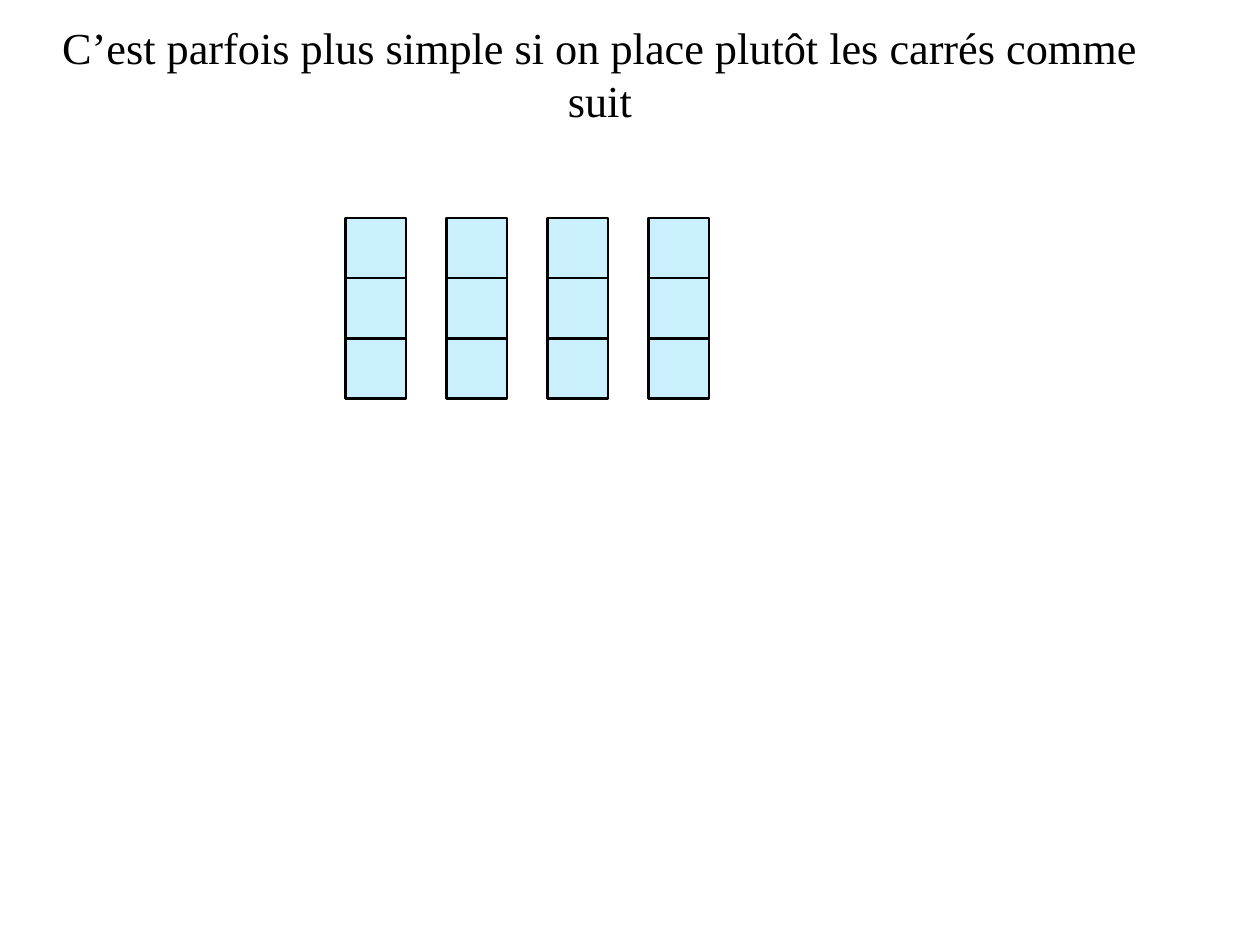
from pptx import Presentation
from pptx.dml.color import RGBColor
from pptx.enum.shapes import MSO_SHAPE as Shape
from pptx.enum.text import MSO_ANCHOR as Anchor, PP_ALIGN as Align
from pptx.util import Inches, Pt

BLACK = RGBColor(0x00, 0x00, 0x00)
BLUE = RGBColor(0xCA, 0xF0, 0xFE)

deck = Presentation()
deck.slide_width = Inches(14.22)
deck.slide_height = Inches(10.67)
slide = deck.slides.add_slide(deck.slide_layouts[5])

# Title
title = slide.shapes.title
title.left, title.top = Inches(0.57), Inches(0.13)
title.width, title.height = Inches(12.4), Inches(1.4)
frame = title.text_frame
frame.text = "C’est parfois plus simple si on place plutôt les carrés comme suit"
frame.word_wrap = True
frame.vertical_anchor = Anchor.MIDDLE
frame.margin_left = frame.margin_right = Inches(0.06)
frame.margin_top = frame.margin_bottom = Inches(0.06)
line = frame.paragraphs[0]
line.alignment = Align.CENTER
font = line.runs[0].font
font.name = "Times New Roman"
font.size = Pt(36)
font.color.rgb = BLACK

# Four columns of three stacked squares
side = 0.68
step = 1.14
for col in range(4):
    for row in range(3):
        square = slide.shapes.add_shape(
            Shape.RECTANGLE,
            Inches(3.9 + col * step), Inches(2.46 + row * side),
            Inches(side), Inches(side))
        square.shadow.inherit = False
        square.fill.solid()
        square.fill.fore_color.rgb = BLUE
        square.line.color.rgb = BLACK
        square.line.width = Pt(2)

deck.save("out.pptx")
